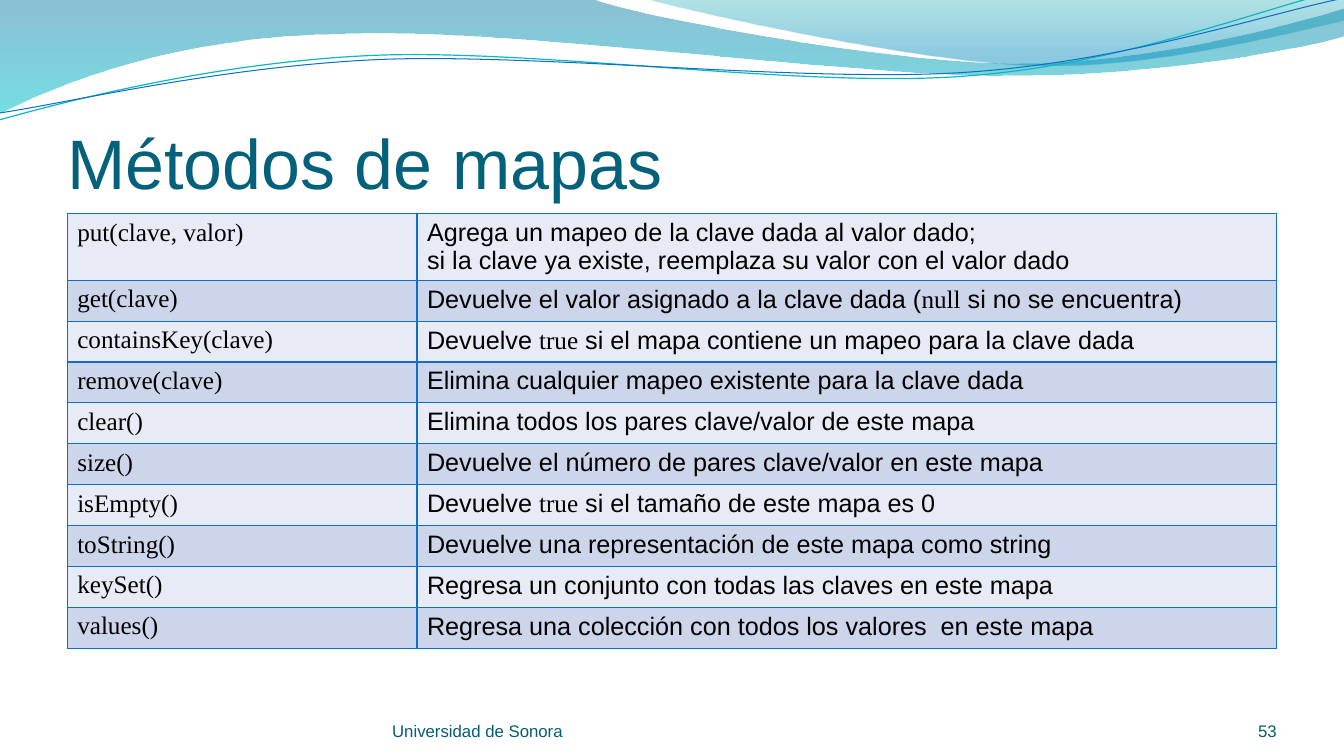
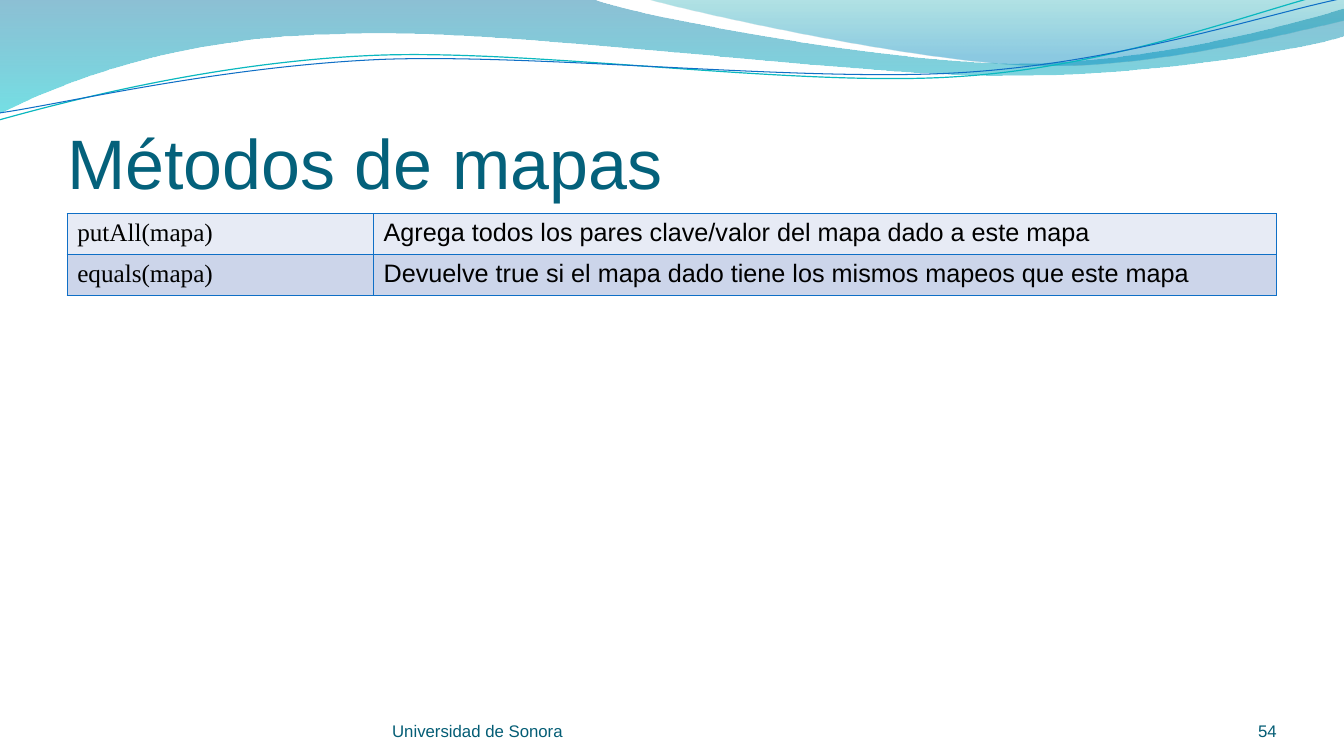
from dataclasses import dataclass

import pptx
import pptx.dml.color
import pptx.enum.text
import pptx.oxml
import pptx.oxml.ns
import pptx.util
from lxml import etree

TITLE = "Métodos de mapas"
FOOTER = "Universidad de Sonora"

# Backticks mark code inside a description.
PAGES = [
    {
        "number": 53,
        "name_column": 3.47,
        "methods": [
            ("put(clave, valor)", "Agrega un mapeo de la clave dada al valor dado;\n"
             "si la clave ya existe, reemplaza su valor con el valor dado"),
            ("get(clave)", "Devuelve el valor asignado a la clave dada (`null` si no se encuentra)"),
            ("containsKey(clave)", "Devuelve `true` si el mapa contiene un mapeo para la clave dada"),
            ("remove(clave)", "Elimina cualquier mapeo existente para la clave dada"),
            ("clear()", "Elimina todos los pares clave/valor de este mapa"),
            ("size()", "Devuelve el número de pares clave/valor en este mapa"),
            ("isEmpty()", "Devuelve `true` si el tamaño de este mapa es 0"),
            ("toString()", "Devuelve una representación de este mapa como string"),
            ("keySet()", "Regresa un conjunto con todas las claves en este mapa"),
            ("values()", "Regresa una colección con todos los valores  en este mapa"),
        ],
    },
    {
        "number": 54,
        "name_column": 3.04,
        "methods": [
            ("putAll(mapa)", "Agrega todos los pares clave/valor del mapa dado a este mapa"),
            ("equals(mapa)", "Devuelve true si el mapa dado tiene los mismos mapeos que este mapa"),
        ],
    },
]


@dataclass(frozen=True)
class Theme:
    body_font: str = "Arial"
    code_font: str = "Times New Roman"
    title_size: float = 50
    table_size: float = 18
    footer_size: float = 12
    title_color: str = "04617B"
    footer_color: str = "045D75"
    text_color: str = "000000"
    border_color: str = "0F6FC6"
    border_width: float = 1
    row_fills: tuple = ("E7EBF5", "CCD5EA")


THEME = Theme()
WIDTH, HEIGHT = 40 / 3, 7.5
MARGIN = WIDTH / 20
CONTENT_WIDTH = WIDTH - 2 * MARGIN
TABLE_TOP = 2.12
ROW_POINTS, EXTRA_LINE_POINTS = 29.2, 18
FOOTER_TOP, FOOTER_HEIGHT = 6.95, 0.4
FOOTER_LEFT, FOOTER_WIDTH, NUMBER_WIDTH = 3.89, 4.89, WIDTH / 12

# Each step is one point (straight) or three points (Bézier curve), in inches.
# Gradient stops are position, colour and opacity in percent.
WAVES = [
    {
        "start": (0, 0),
        "steps": [
            [(5.87, -0.01)],
            [(6.34, 0.17), (8.85, 0.63), (10.11, 0.63)],
            [(11.38, 0.63), (12.78, 0.26), (13.33, 0.09)],
            [(13.35, 0.36)],
            [(13.11, 0.44), (11.6, 0.76), (9.94, 0.75)],
            [(8.29, 0.75), (5.09, 0.28), (3.43, 0.34)],
            [(1.72, 0.36), (0.61, 0.83), (-0.01, 1.13)],
            [(0, 0)],
        ],
        "gradient": [(0, "0074A1", 45), (1, "00C6CF", 55)],
    },
    {
        "start": (6.39, -0.01),
        "steps": [
            [(6.79, 0.11), (9.09, 0.62), (10.25, 0.65)],
            [(11.41, 0.69), (12.82, 0.32), (13.33, 0.21)],
            [(13.33, 0)],
            [(6.39, -0.01)],
        ],
        "gradient": [(0, "00A1A9", 30), (0.8, "008BBF", 45)],
    },
    {
        "start": (-0.01, 1.19),
        "steps": [
            [(0.64, 1.01), (2.11, 0.62), (3.69, 0.55)],
            [(5.27, 0.48), (7.9, 0.87), (9.5, 0.76)],
            [(11.1, 0.66), (12.52, 0.08), (13.31, -0.1)],
        ],
        "line": ("0AB8BF", 0.85),
    },
    {
        "start": (0, 1.12),
        "steps": [
            [(0.63, 1.03), (2.18, 0.66), (3.78, 0.59)],
            [(5.37, 0.53), (7.96, 0.82), (9.55, 0.72)],
            [(11.15, 0.62), (12.55, 0.14), (13.34, -0.02)],
        ],
        "line": ("0F6FC6", 0.75),
    },
]


def inches(*values):
    return [pptx.util.Inches(value) for value in values]


def rgb(color):
    return pptx.dml.color.RGBColor.from_string(color)


def add_span(para, text, size, color, font=THEME.body_font):
    span = para.add_run()
    span.text = text
    span.font.name = font
    span.font.size = pptx.util.Pt(size)
    span.font.color.rgb = rgb(color)


def bend_segments(shape, steps):
    """Merge the three straight segments of each Bézier step into one curve."""
    segments = iter(list(shape.element.iter(pptx.oxml.ns.qn("a:lnTo"))))
    for step in steps:
        first, *others = [next(segments) for _ in step]
        if others:
            curve = etree.Element(pptx.oxml.ns.qn("a:cubicBezTo"))
            first.addprevious(curve)
            for segment in (first, *others):
                curve.append(segment[0])
                segment.getparent().remove(segment)


def fill_gradient(shape, stops):
    shape.fill.gradient()
    shape.fill.gradient_angle = 270
    for stop, (position, color, _) in zip(shape.fill.gradient_stops, stops):
        stop.position = position
        stop.color.rgb = rgb(color)
    colors = shape.element.iter(pptx.oxml.ns.qn("a:srgbClr"))
    for color_element, (_, _, opacity) in zip(list(colors), stops):
        alpha = etree.SubElement(color_element, pptx.oxml.ns.qn("a:alpha"))
        alpha.set("val", str(opacity * 1000))


def add_wave(page, wave):
    builder = page.shapes.build_freeform(*inches(*wave["start"]))
    points = [inches(*point) for step in wave["steps"] for point in step]
    builder.add_line_segments(points, close="gradient" in wave)
    shape = builder.convert_to_shape()
    bend_segments(shape, wave["steps"])
    shape.shadow.inherit = False
    if "gradient" in wave:
        fill_gradient(shape, wave["gradient"])
        shape.line.fill.background()
    else:
        color, width = wave["line"]
        shape.fill.background()
        shape.line.color.rgb = rgb(color)
        shape.line.width = pptx.util.Pt(width)
    return shape


def add_waves_to_layout(page):
    """Draw the waves with the page's freeform builder, then move them to its layout."""
    layout_tree = page.slide_layout.shapes.element
    next_id = 1 + max(shape.shape_id for shape in page.slide_layout.shapes)
    for shape_id, wave in enumerate(WAVES, next_id):
        shape = add_wave(page, wave)
        shape.element.nvSpPr.cNvPr.set("id", str(shape_id))
        layout_tree.append(shape.element)


def set_frame(frame, top_inset=0):
    """Bottom-anchored text that wraps, without side insets."""
    frame.word_wrap = True
    frame.auto_size = pptx.enum.text.MSO_AUTO_SIZE.NONE
    frame.vertical_anchor = pptx.enum.text.MSO_ANCHOR.BOTTOM
    frame.margin_left = frame.margin_right = frame.margin_bottom = 0
    frame.margin_top = pptx.util.Inches(top_inset)


def format_title(page):
    title = page.shapes.title
    title.left, title.top, title.width, title.height = inches(MARGIN, 0.77, CONTENT_WIDTH, 1.25)
    set_frame(title.text_frame, top_inset=0.05)
    para = title.text_frame.paragraphs[0]
    para.alignment = pptx.enum.text.PP_ALIGN.LEFT
    add_span(para, TITLE, THEME.title_size, THEME.title_color)


def add_footer(page, left, width, text, alignment):
    box = page.shapes.add_textbox(*inches(left, FOOTER_TOP, width, FOOTER_HEIGHT))
    set_frame(box.text_frame)
    para = box.text_frame.paragraphs[0]
    para.alignment = alignment
    add_span(para, text, THEME.footer_size, THEME.footer_color)


def add_borders(cell):
    properties = cell._tc.get_or_add_tcPr()
    for side in ("lnL", "lnR", "lnT", "lnB"):
        properties.append(pptx.oxml.parse_xml(
            f'<a:{side} {pptx.oxml.ns.nsdecls("a")} w="{pptx.util.Pt(THEME.border_width)}">'
            f'<a:solidFill><a:srgbClr val="{THEME.border_color}"/></a:solidFill></a:{side}>'))


def fill_cell(cell, text, color):
    add_borders(cell)
    cell.fill.solid()
    cell.fill.fore_color.rgb = rgb(color)
    frame = cell.text_frame
    for index, line in enumerate(text.split("\n")):
        para = frame.add_paragraph() if index else frame.paragraphs[0]
        for position, part in enumerate(line.split("`")):
            if part:
                font = THEME.code_font if position % 2 else THEME.body_font
                add_span(para, part, THEME.table_size, THEME.text_color, font)


def add_method_table(page, methods, name_column):
    heights = [pptx.util.Pt(ROW_POINTS + EXTRA_LINE_POINTS * text.count("\n"))
               for _, text in methods]
    table = page.shapes.add_table(
        len(methods), 2, *inches(MARGIN, TABLE_TOP, CONTENT_WIDTH), sum(heights)).table
    table.first_row = table.horz_banding = False
    for column, width in zip(table.columns, inches(name_column, CONTENT_WIDTH - name_column)):
        column.width = width
    for index, (name, description) in enumerate(methods):
        table.rows[index].height = heights[index]
        color = THEME.row_fills[index % 2]
        fill_cell(table.cell(index, 0), f"`{name}`", color)
        fill_cell(table.cell(index, 1), description, color)


def main():
    deck = pptx.Presentation()
    deck.slide_width, deck.slide_height = inches(WIDTH, HEIGHT)
    title_only = deck.slide_layouts.get_by_name("Title Only")
    align = pptx.enum.text.PP_ALIGN
    number_left = WIDTH - MARGIN - NUMBER_WIDTH
    for index, content in enumerate(PAGES):
        page = deck.slides.add_slide(title_only)
        if index == 0:
            add_waves_to_layout(page)
        format_title(page)
        add_method_table(page, content["methods"], content["name_column"])
        add_footer(page, FOOTER_LEFT, FOOTER_WIDTH, FOOTER, align.LEFT)
        add_footer(page, number_left, NUMBER_WIDTH, str(content["number"]), align.RIGHT)
    deck.save("out.pptx")


if __name__ == "__main__":
    main()
